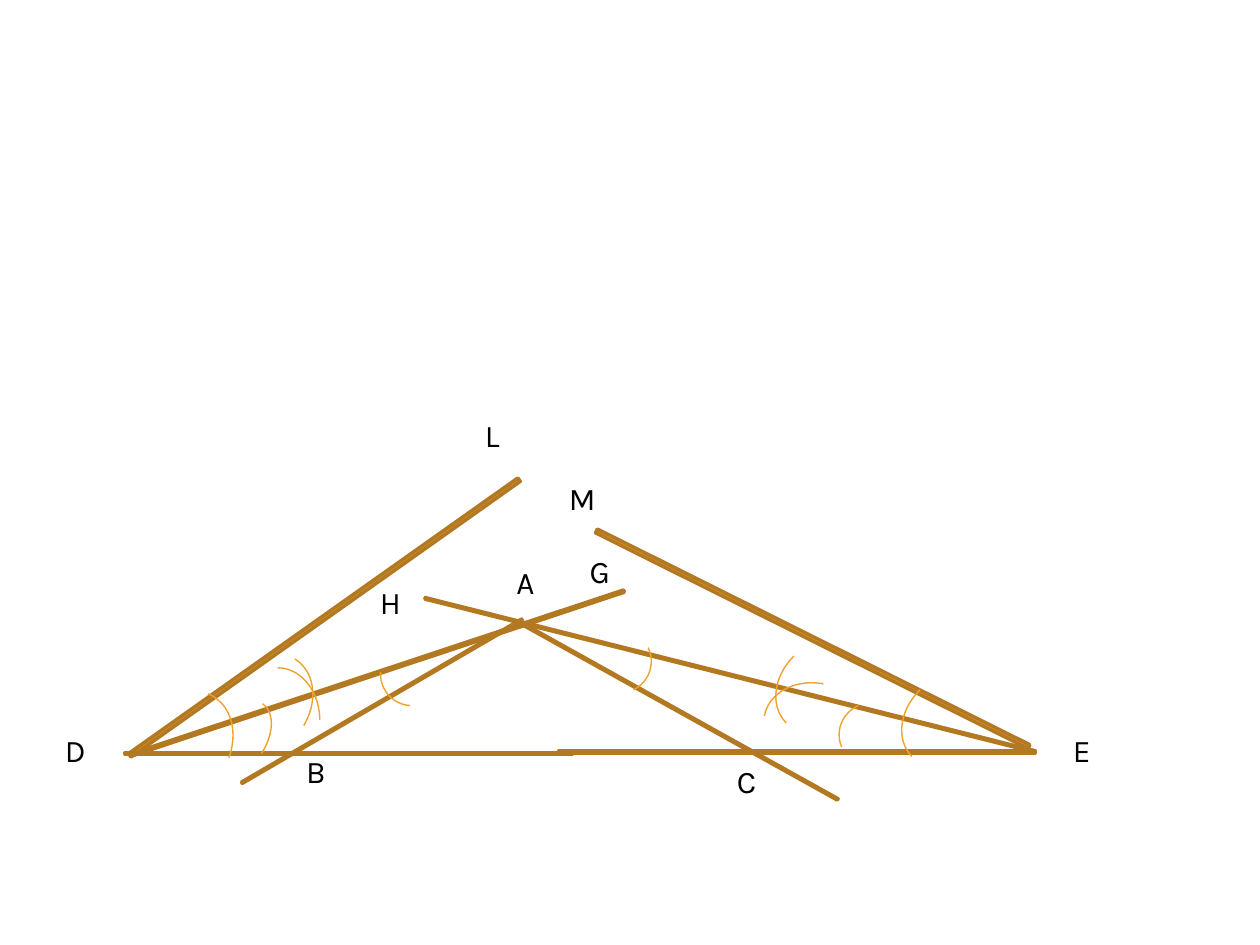
from pptx import Presentation
from pptx.dml.color import RGBColor
from pptx.enum import shapes, text
from pptx.util import Pt

AMBER = RGBColor(0xF0, 0xA2, 0x2E)
BROWN = RGBColor(0xB2, 0x78, 0x22)
BLACK = RGBColor(0, 0, 0)

FIGURE = (0, 234)  # left, top of the construction; all positions below are relative to it

# left, top, width, height, rotation
RAYS = [
    (25.2, 193.7, 347.8, 5.8, 0),      # base from D
    (0, 113.8, 370.8, 10.1, 324.7),    # DL
    (14.4, 147.6, 403.2, 5.8, 341.6),  # DG
    (172.8, 149.8, 488.2, 3.6, 14.1),  # HE
    (92.2, 164.9, 252, 3.6, 149.8),    # AB
    (247, 170.6, 282.2, 3.6, 29.1),    # AC
    (276.5, 126, 375.8, 10.1, 26.5),   # ME
    (270, 193, 370.8, 5.8, 0),         # base to E
]

LARGE, SMALL, NARROW = (48.2, 59.8), (36, 36), (30.2, 48.2)
# left, top, size, rotation
ARCS = [
    (446.4, 128.2, LARGE, 225.4),
    (336.2, 126, SMALL, 64),
    (518.4, 147.6, LARGE, 226),
    (442.1, 150.5, LARGE, 280.3),
    (479.5, 167.8, SMALL, 246.9),
    (217.4, 133.2, SMALL, 183.8),
    (128.9, 138.2, LARGE, 31.2),
    (134.6, 147.6, LARGE, 0),
    (84.2, 160.6, LARGE, 20.8),
    (121.7, 164.2, NARROW, 33.4),
]

# letter: left, top, width
LABELS = {
    "G": (329.8, 77.8, 30),
    "B": (167.8, 192.2, 30),
    "C": (414, 198, 24),
    "L": (270, 0, 24),
    "H": (210, 95.8, 24),
    "D": (30, 180, 18),
    "A": (288, 84.2, 30),
    "M": (318, 36, 42),
    "E": (606, 180, 36),
}
LABEL_HEIGHT = 28.8


def add_stroke(slide, preset, box, rotation, color, weight):
    shape = slide.shapes.add_shape(preset, *map(Pt, box))
    shape.rotation = rotation
    shape.shadow.inherit = False
    shape.line.color.rgb = color
    shape.line.width = Pt(weight)
    return shape


def add_rays(slide, left, top):
    for x, y, width, height, rotation in RAYS:
        ray = add_stroke(slide, shapes.MSO_SHAPE.MATH_MINUS,
                         (left + x, top + y, width, height), rotation, BROWN, 2)
        ray.fill.solid()
        ray.fill.fore_color.rgb = AMBER


def add_arcs(slide, left, top):
    for x, y, size, rotation in ARCS:
        arc = add_stroke(slide, shapes.MSO_SHAPE.ARC,
                         (left + x, top + y, *size), rotation, AMBER, 0.79)
        arc.fill.background()


def add_labels(slide, left, top):
    for letter, (x, y, width) in LABELS.items():
        box = slide.shapes.add_textbox(Pt(left + x), Pt(top + y), Pt(width), Pt(LABEL_HEIGHT))
        frame = box.text_frame
        frame.text = letter
        frame.word_wrap = True
        frame.auto_size = text.MSO_AUTO_SIZE.SHAPE_TO_FIT_TEXT
        font = frame.paragraphs[0].runs[0].font
        for name, value in {"name": "Karla", "size": Pt(18)}.items():
            setattr(font, name, value)
        font.color.rgb = BLACK


def main():
    presentation = Presentation()
    presentation.slide_width, presentation.slide_height = Pt(720), Pt(540)
    slide = presentation.slides.add_slide(presentation.slide_layouts[6])
    # Lines first, compass arcs over them, point names on top
    for add_part in (add_rays, add_arcs, add_labels):
        add_part(slide, *FIGURE)
    presentation.save("out.pptx")


if __name__ == "__main__":
    main()
